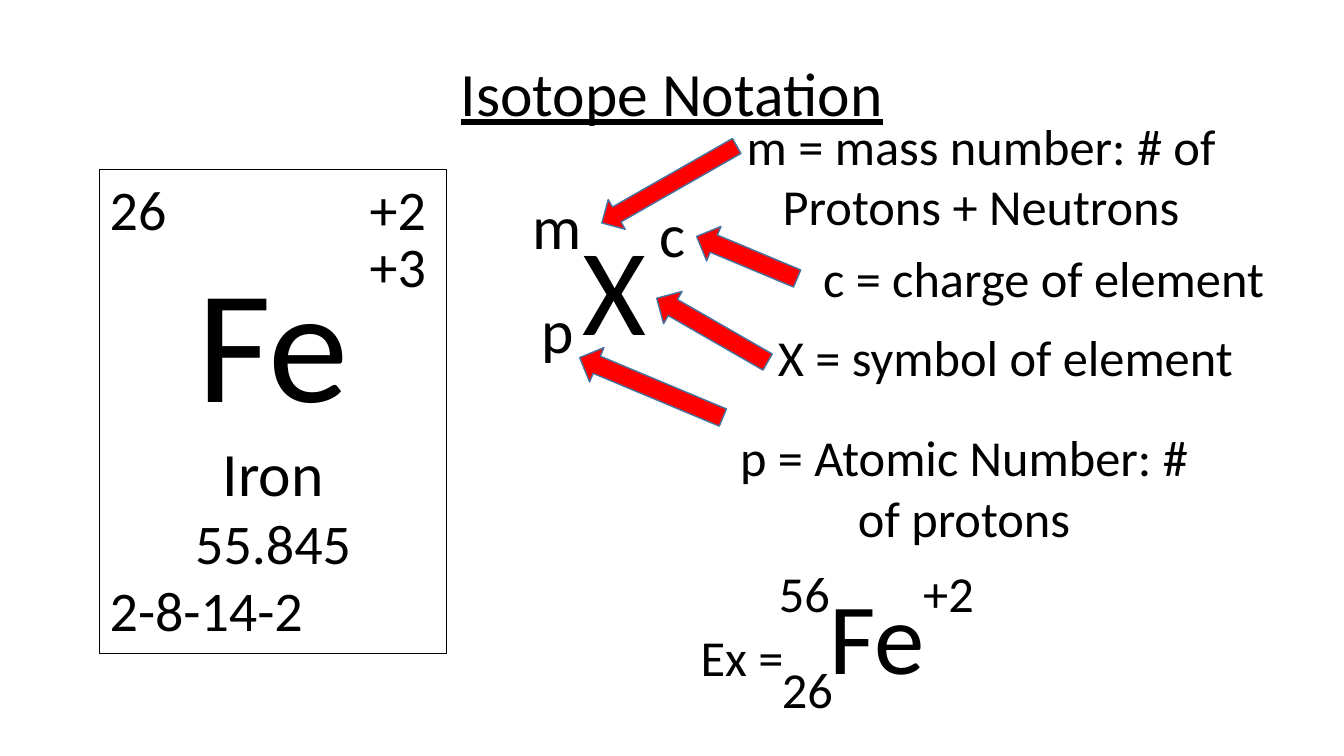
import pptx
import pptx.util
import pptx.dml.color
import pptx.enum.shapes
import pptx.enum.text

Pt = pptx.util.Pt
ALIGN = pptx.enum.text.PP_ALIGN
ANCHOR = pptx.enum.text.MSO_ANCHOR
SHAPE = pptx.enum.shapes.MSO_SHAPE


def tint(text):
    return pptx.dml.color.RGBColor.from_string(text)


def apply(item, form):
    for name, value in form.items():
        setattr(item, name, value)


def place(item, left, top, width, height):
    apply(item, {"left": Pt(left), "top": Pt(top),
                 "width": Pt(width), "height": Pt(height)})


def write(para, text, size, align=ALIGN.CENTER, **form):
    para.alignment = align
    run = para.add_run()
    run.text = text
    apply(run.font, {"name": "Calibri", "size": Pt(size), **form})
    run.font.color.rgb = tint("000000")


def label(slide, text, size, left, top, width, height=60, align=ALIGN.CENTER):
    box = slide.shapes.add_textbox(Pt(left), Pt(top), Pt(width), Pt(height))
    box.text_frame.word_wrap = True
    write(box.text_frame.paragraphs[0], text, size, align)


def draw(slide, kind, left, top, width, height, fill, edge, weight):
    shape = slide.shapes.add_shape(kind, Pt(left), Pt(top), Pt(width), Pt(height))
    shape.shadow.inherit = False
    shape.fill.solid()
    shape.fill.fore_color.rgb = tint(fill)
    shape.line.color.rgb = tint(edge)
    shape.line.width = Pt(weight)
    return shape


def arrow(slide, left, top, width, height, turn):
    shape = draw(slide, SHAPE.RIGHT_ARROW, left, top, width, height,
                 "FF0000", "43739E", 1)
    shape.rotation = turn


def head(slide, text):
    title = slide.shapes.title
    place(title, 66, 16.6, 828, 104.4)
    title.text_frame.vertical_anchor = ANCHOR.MIDDLE
    para = title.text_frame.paragraphs[0]
    para.line_spacing = 0.9
    write(para, text, 44, underline=True, bold=False)


def tile(slide, left, top, width, height, lines):
    card = draw(slide, SHAPE.RECTANGLE, left, top, width, height,
                "FFFFFF", "000000", 0.75)
    frame = card.text_frame
    apply(frame, {"word_wrap": True, "vertical_anchor": ANCHOR.TOP})
    for row, (text, size, align) in enumerate(lines):
        para = frame.add_paragraph() if row else frame.paragraphs[0]
        write(para, text, size, align)


def main():
    deck = pptx.Presentation()
    apply(deck, {"slide_width": Pt(960), "slide_height": Pt(540)})
    slide = deck.slides.add_slide(deck.slide_layouts[5])
    head(slide, "Isotope Notation")

    tile(slide, 71.3, 121, 247.7, 345.6, [
        ("26", 40, ALIGN.LEFT),
        ("Fe", 115, ALIGN.CENTER),
        ("Iron", 44, ALIGN.CENTER),
        ("55.845", 40, ALIGN.CENTER),
        ("2-8-14-2", 40, ALIGN.LEFT),
    ])
    for text, top in (("+2", 121), ("+3", 162)):
        label(slide, text, 40, 257, top, 68.4, align=ALIGN.LEFT)

    for text, size, left, top in (
        ("X", 88, 398.2, 148.3),
        ("m", 44, 357.1, 131),
        ("p", 44, 357.1, 205.2),
        ("c", 44, 439.2, 136.1),
        ("Ex =", 36, 489, 443.5),
        ("56", 36, 533.5, 398.2),
        ("26", 36, 535.7, 466.6),
        ("+2", 36, 636.5, 398.2),
    ):
        label(slide, text, size, left, top, 82)
    label(slide, "Fe", 72, 576, 406.1, 101, 95)

    for text, left, top in (
        ("m = mass number: # of Protons + Neutrons", 518.4, 78.5),
        ("c = charge of element", 563, 172.8),
        ("X = symbol of element", 535.7, 229.7),
        ("p = Atomic Number: # of protons", 506.2, 301),
    ):
        label(slide, text, 36, left, top, 365)

    for left, top, width, height, turn in (
        (422.6, 119.5, 110.9, 24.5, 150.3),
        (494.6, 170.6, 77.8, 26.6, 202.7),
        (463, 222.5, 91.4, 26.6, 209.9),
        (409.7, 263.5, 110.9, 26.6, 202.7),
    ):
        arrow(slide, left, top, width, height, turn)

    deck.save("out.pptx")


if __name__ == "__main__":
    main()
